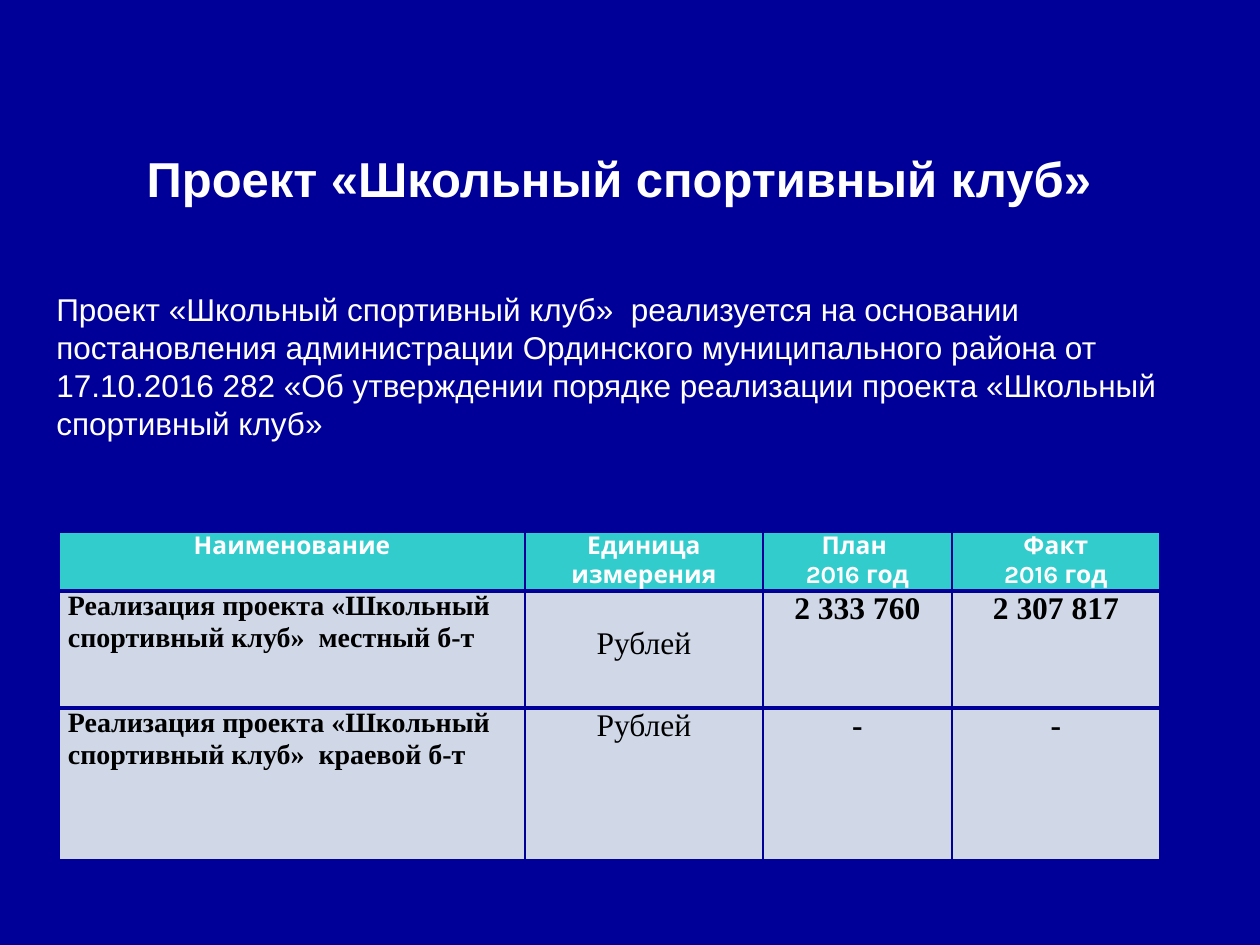
"""Build the school sports club project slide."""
from lxml import etree
from pptx import Presentation
from pptx import util as u
from pptx.dml.color import RGBColor
from pptx.enum import text
from pptx.oxml.ns import qn

NAVY, TEAL, PALE = "000099", "33CCCC", "D0D8E8"
WHITE, BLACK = "FFFFFF", "000000"
SERIF = "Times New Roman"
TITLE = "Проект «Школьный спортивный клуб»"
BODY = (
    "Проект «Школьный спортивный клуб»  реализуется на основании "
    "постановления администрации Ординского муниципального района от "
    "17.10.2016 282 «Об утверждении порядке реализации проекта "
    "«Школьный спортивный клуб»"
)
COLUMNS = (466, 238, 189, 208)
ROWS = (59, 117, 152)
HEADER = ("Наименование", "Единица измерения", "План \n2016 год", "Факт\n2016 год")
RECORDS = (
    ("Реализация проекта «Школьный спортивный клуб»  местный б-т",
     "Рублей", "2 333 760", "2 307 817"),
    ("Реализация проекта «Школьный спортивный клуб»  краевой б-т",
     "Рублей", "-", "-"),
)


def px(n):
    """Turn pixels into EMU at 126 pixels to the inch."""
    return u.Emu(round(n * 914400 / 126))


def color(value):
    """Return the colour for a hex string."""
    return RGBColor.from_string(value)


def write(tf, content, size, font="Arial", fill=WHITE, bold=False, center=False):
    """Write each line of content as a formatted paragraph."""
    for i, line in enumerate(content.split("\n")):
        p = tf.add_paragraph() if i else tf.paragraphs[0]
        p.alignment = text.PP_ALIGN.CENTER if center else text.PP_ALIGN.LEFT
        r = p.add_run()
        r.text = line
        r.font.size, r.font.name, r.font.bold = u.Pt(size), font, bold
        r.font.color.rgb = color(fill)


def add_title(s):
    """Place and format the slide title."""
    sp = s.shapes.title
    sp.left, sp.top, sp.width, sp.height = map(px, (132, 142, 974, 72))
    tf = sp.text_frame
    tf.word_wrap = False
    tf.auto_size = text.MSO_AUTO_SIZE.NONE
    tf.vertical_anchor = text.MSO_ANCHOR.TOP
    write(tf, TITLE, 28, bold=True, center=True)


def add_body(s):
    """Add the paragraph that explains the project."""
    tf = s.shapes.add_textbox(*map(px, (44, 284, 1171, 280))).text_frame
    tf.word_wrap = True
    write(tf, BODY, 18)


def set_border(cell, side, width):
    """Draw one navy border of a cell."""
    ln = etree.SubElement(cell._tc.get_or_add_tcPr(), qn(f"a:ln{side}"), w=str(u.Pt(width)))
    fill = etree.SubElement(ln, qn("a:solidFill"))
    etree.SubElement(fill, qn("a:srgbClr"), val=NAVY)


def style_cell(cell, fill, top, bottom):
    """Set the borders, fill and margins of a cell."""
    for side, width in (("L", 1), ("R", 1), ("T", top), ("B", bottom)):
        set_border(cell, side, width)
    cell.fill.solid()
    cell.fill.fore_color.rgb = color(fill)
    cell.margin_left = cell.margin_right = px(9)
    cell.margin_top = cell.margin_bottom = 0


def add_budget_table(s):
    """Add the table of planned and actual spending."""
    table = s.shapes.add_table(
        len(ROWS), len(COLUMNS), px(59), px(532), px(sum(COLUMNS)), px(sum(ROWS))
    ).table
    table.first_row = table.horz_banding = False
    for column, width in zip(table.columns, COLUMNS):
        column.width = px(width)
    for row, height in zip(table.rows, ROWS):
        row.height = px(height)
    last = len(ROWS) - 1
    for i, values in enumerate((HEADER, *RECORDS)):
        for j, value in enumerate(values):
            cell = table.cell(i, j)
            style_cell(cell, PALE if i else TEAL, 3 if i else 1, 1 if i == last else 3)
            if i == 0:
                write(cell.text_frame, value, 14, "Karla", bold=True, center=True)
            else:
                write(cell.text_frame, value, 18 if j else 16, SERIF, BLACK,
                      bold=j != 1, center=j > 0)
    table.cell(1, 1).margin_top = px(35)


def main():
    """Build and save the slide."""
    prs = Presentation()
    prs.slide_width, prs.slide_height = px(1260), px(945)
    s = prs.slides.add_slide(prs.slide_layouts[5])
    s.background.fill.solid()
    s.background.fill.fore_color.rgb = color(NAVY)
    add_title(s)
    add_body(s)
    add_budget_table(s)
    prs.save("out.pptx")


if __name__ == "__main__":
    main()
